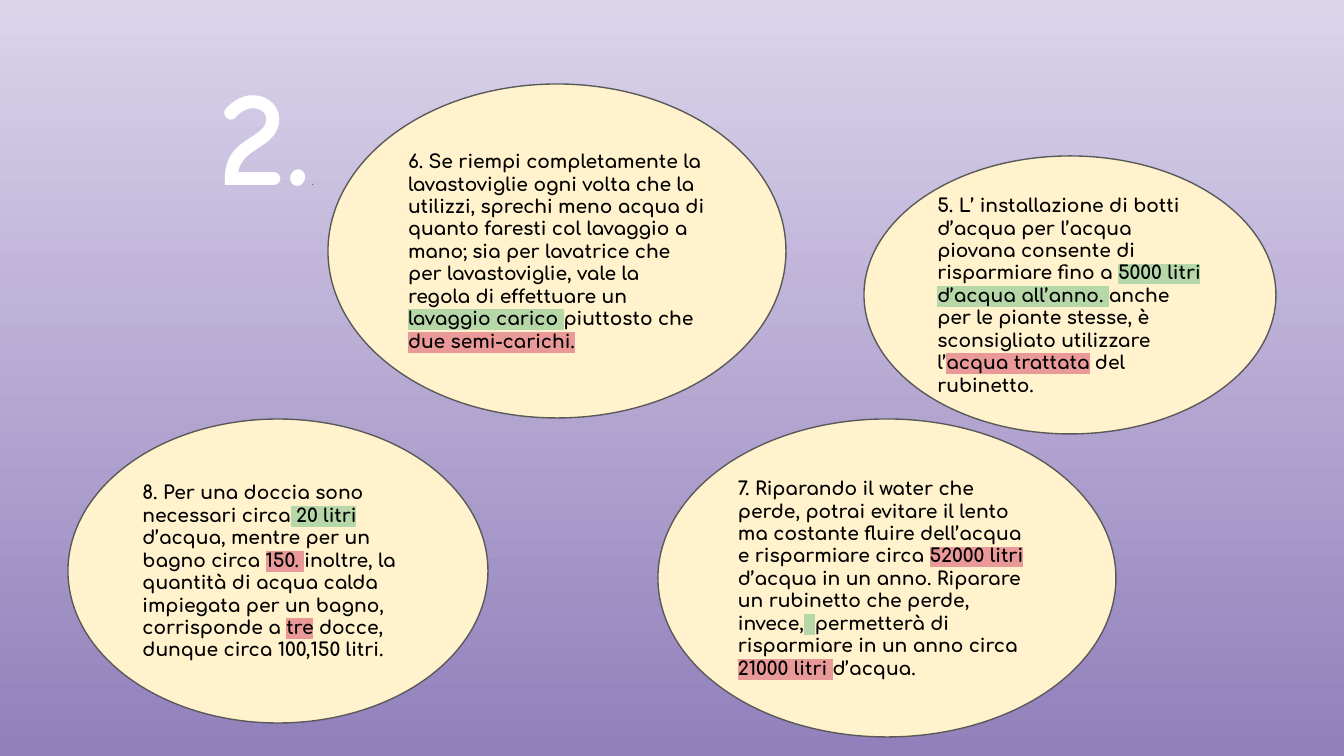
from lxml import etree
from pptx import Presentation
from pptx.dml.color import RGBColor
from pptx.enum.shapes import MSO_SHAPE
from pptx.enum.text import MSO_ANCHOR, PP_ALIGN
from pptx.oxml.ns import qn
from pptx.util import Emu, Pt

OVAL = MSO_SHAPE.OVAL
TOP, MIDDLE = MSO_ANCHOR.TOP, MSO_ANCHOR.MIDDLE
LEFT = PP_ALIGN.LEFT

LILAC = RGBColor(0xDB, 0xD4, 0xEB)
PURPLE = RGBColor(0x91, 0x80, 0xBB)
CREAM = RGBColor(0xFF, 0xF2, 0xCC)
GRAY = RGBColor(0x59, 0x59, 0x59)
BLACK = RGBColor(0x00, 0x00, 0x00)
WHITE = RGBColor(0xFF, 0xFF, 0xFF)
GREEN = RGBColor(0xB6, 0xD7, 0xA8)
RED = RGBColor(0xEA, 0x99, 0x99)

PX = 914400 / 134.4
INSET = 13


def px(*lengths):
    return [Emu(round(length * PX)) for length in lengths]


def add_span(para, text, color, highlight=None, **font_values):
    span = para.add_run()
    span.text = text
    for name, value in font_values.items():
        setattr(span.font, name, value)
    span.font.color.rgb = color
    if highlight is not None:
        mark = etree.Element(qn("a:highlight"))
        etree.SubElement(mark, qn("a:srgbClr"), val=str(highlight))
        span.font._element.find(qn("a:solidFill")).addnext(mark)


deck = Presentation()
deck.slide_width, deck.slide_height = px(1344, 756)
page = deck.slides.add_slide(deck.slide_layouts[6])

background = page.background.fill
background.gradient()
background.gradient_angle = 270
for stop, color, position in zip(background.gradient_stops, (LILAC, PURPLE), (0, 1)):
    stop.color.rgb = color
    stop.position = position

# Number of the page
title = page.shapes.add_textbox(*px(34, 36, 1253, 85))
frame = title.text_frame
frame.word_wrap = True
frame.vertical_anchor = TOP
frame.margin_left, frame.margin_top = px(185, INSET)
para = frame.paragraphs[0]
add_span(para, "2.", WHITE, name="Comic Neue", size=Pt(72.9), bold=True)
add_span(para, ".", GRAY, name="Arial", size=Pt(5.8), bold=False)

# Tips: left, top, width, height and the spans with their highlight
tips = [
    ((864, 156, 412, 278), [
        ("5. L’ installazione di botti d’acqua per l’acqua piovana consente di "
         "risparmiare fino a ", None),
        ("5000 litri d’acqua all’anno. ", GREEN),
        ("anche per le piante stesse, è sconsigliato utilizzare l’", None),
        ("acqua trattata", RED),
        (" del rubinetto.", None),
    ]),
    ((328, 84, 458, 334), [
        ("6. Se riempi completamente la lavastoviglie ogni volta che la utilizzi, "
         "sprechi meno acqua di quanto faresti col lavaggio a mano; sia per "
         "lavatrice che per lavastoviglie, vale la regola di effettuare un ", None),
        ("lavaggio carico ", GREEN),
        ("piuttosto che ", None),
        ("due semi-carichi.", RED),
    ]),
    ((658, 419, 458, 318), [
        ("7. Riparando il water che perde, potrai evitare il lento ma costante "
         "fluire dell’acqua e risparmiare circa ", None),
        ("52000 litri ", RED),
        ("d’acqua in un anno. Riparare un rubinetto che perde, invece,", None),
        ("  ", GREEN),
        ("permetterà di risparmiare in un anno circa ", None),
        ("21000 litri ", RED),
        ("d’acqua.", None),
    ]),
    ((68, 419, 420, 304), [
        ("8. Per una doccia sono necessari circa", None),
        (" 20 litri", GREEN),
        (" d’acqua, mentre per un bagno circa ", None),
        ("150. ", RED),
        ("inoltre, la quantità di acqua calda impiegata per un bagno, "
         "corrisponde a ", None),
        ("tre", RED),
        (" docce, dunque circa 100,150 litri.", None),
    ]),
]
for place, spans in tips:
    bubble = page.shapes.add_shape(OVAL, *px(*place))
    bubble.shadow.inherit = False
    bubble.fill.solid()
    bubble.fill.fore_color.rgb = CREAM
    bubble.line.color.rgb = GRAY
    bubble.line.width = Pt(0.75)
    frame = bubble.text_frame
    frame.word_wrap = True
    frame.vertical_anchor = MIDDLE
    for side in ("left", "top", "right", "bottom"):
        setattr(frame, f"margin_{side}", px(INSET)[0])
    para = frame.paragraphs[0]
    para.alignment = LEFT
    for text, highlight in spans:
        add_span(para, text, BLACK, highlight, name="Comfortaa", size=Pt(10), bold=True)

deck.save("out.pptx")
